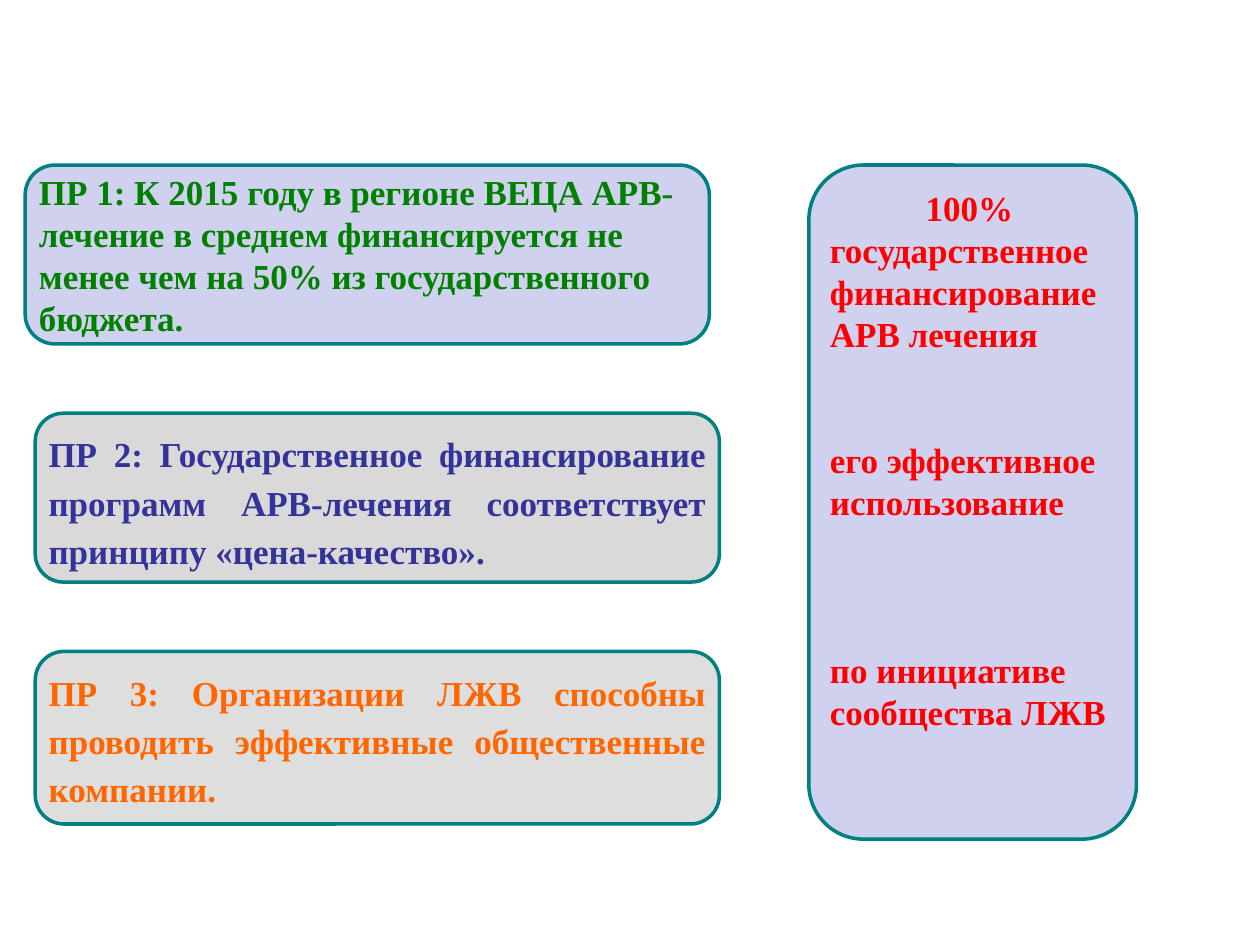
from lxml import etree
from pptx import Presentation
from pptx.dml.color import RGBColor
from pptx.enum.shapes import MSO_SHAPE
from pptx.enum.text import MSO_ANCHOR, PP_ALIGN
from pptx.oxml.ns import qn
from pptx.util import Inches, Pt

BORDER = "008080"
LAVENDER = ("A3A3E0", 50)
INDICATORS = [
    dict(box=(0.28, 5.17, 5.43, 1.37), fill=("BFBFBF", 50), color="FF6600", justified=True,
         text="ПР 3: Организации ЛЖВ способны проводить эффективные общественные компании."),
    dict(box=(0.28, 3.28, 5.43, 1.34), fill=("D9D9D9", 100), color="333399", justified=True,
         text="ПР 2: Государственное финансирование программ АРВ-лечения "
              "соответствует принципу «цена-качество»."),
    dict(box=(0.2, 1.31, 5.43, 1.42), fill=LAVENDER, color="008000", justified=False,
         text="ПР 1: К 2015 году в регионе ВЕЦА АРВ-лечение в среднем финансируется "
              "не менее чем на 50% из государственного бюджета."),
]
GOAL_BOX = (6.42, 1.31, 2.6, 5.35)
GOAL_COLOR = "FF0000"
GOAL_INDENT = 0.76
GOALS = [
    ("100% государственное финансирование АРВ лечения", 0),
    ("его эффективное использование", 48),
    ("по инициативе сообщества ЛЖВ", 72),
]


def rgb(value):
    """Turn a hex string into a colour."""
    return RGBColor.from_string(value)


def add_panel(slide, box, fill, anchor):
    """Add a bordered rounded panel and return its text frame."""
    panel = slide.shapes.add_shape(MSO_SHAPE.ROUNDED_RECTANGLE, *map(Inches, box))
    panel.shadow.inherit = False
    color, opacity = fill
    panel.fill.solid()
    panel.fill.fore_color.rgb = rgb(color)
    if opacity < 100:
        tint = panel.fill._xPr.find(qn("a:solidFill"))[0]
        etree.SubElement(tint, qn("a:alpha")).set("val", str(opacity * 1000))
    panel.line.color.rgb = rgb(BORDER)
    panel.line.width = Pt(2)
    frame = panel.text_frame
    frame.word_wrap = True
    frame.vertical_anchor = anchor
    frame.margin_left = frame.margin_right = Inches(0.04)
    frame.margin_top = frame.margin_bottom = Inches(0.04)
    return frame


def write(paragraph, text, color, align=PP_ALIGN.LEFT):
    """Fill a paragraph with bold coloured text."""
    paragraph.text = text
    paragraph.alignment = align
    font = paragraph.runs[0].font
    font.name, font.size, font.bold = "Times New Roman", Pt(20), True
    font.color.rgb = rgb(color)


def main():
    """Build the slide and save it."""
    deck = Presentation()
    deck.slide_width, deck.slide_height = Inches(10), Inches(7.5)
    slide = deck.slides.add_slide(deck.slide_layouts[6])

    for indicator in INDICATORS:
        justified = indicator["justified"]
        anchor = MSO_ANCHOR.TOP if justified else MSO_ANCHOR.MIDDLE
        frame = add_panel(slide, indicator["box"], indicator["fill"], anchor)
        statement = frame.paragraphs[0]
        write(statement, indicator["text"], indicator["color"],
              PP_ALIGN.JUSTIFY if justified else PP_ALIGN.LEFT)
        if justified:
            statement.line_spacing = 1.15
            statement.space_after = Pt(10)

    frame = add_panel(slide, GOAL_BOX, LAVENDER, MSO_ANCHOR.TOP)
    for index, (text, gap) in enumerate(GOALS):
        goal = frame.add_paragraph() if index else frame.paragraphs[0]
        write(goal, text, GOAL_COLOR)
        if gap:
            goal.space_before = Pt(gap)
        else:
            goal._p.get_or_add_pPr().set("indent", str(Inches(GOAL_INDENT)))

    deck.save("out.pptx")


if __name__ == "__main__":
    main()
